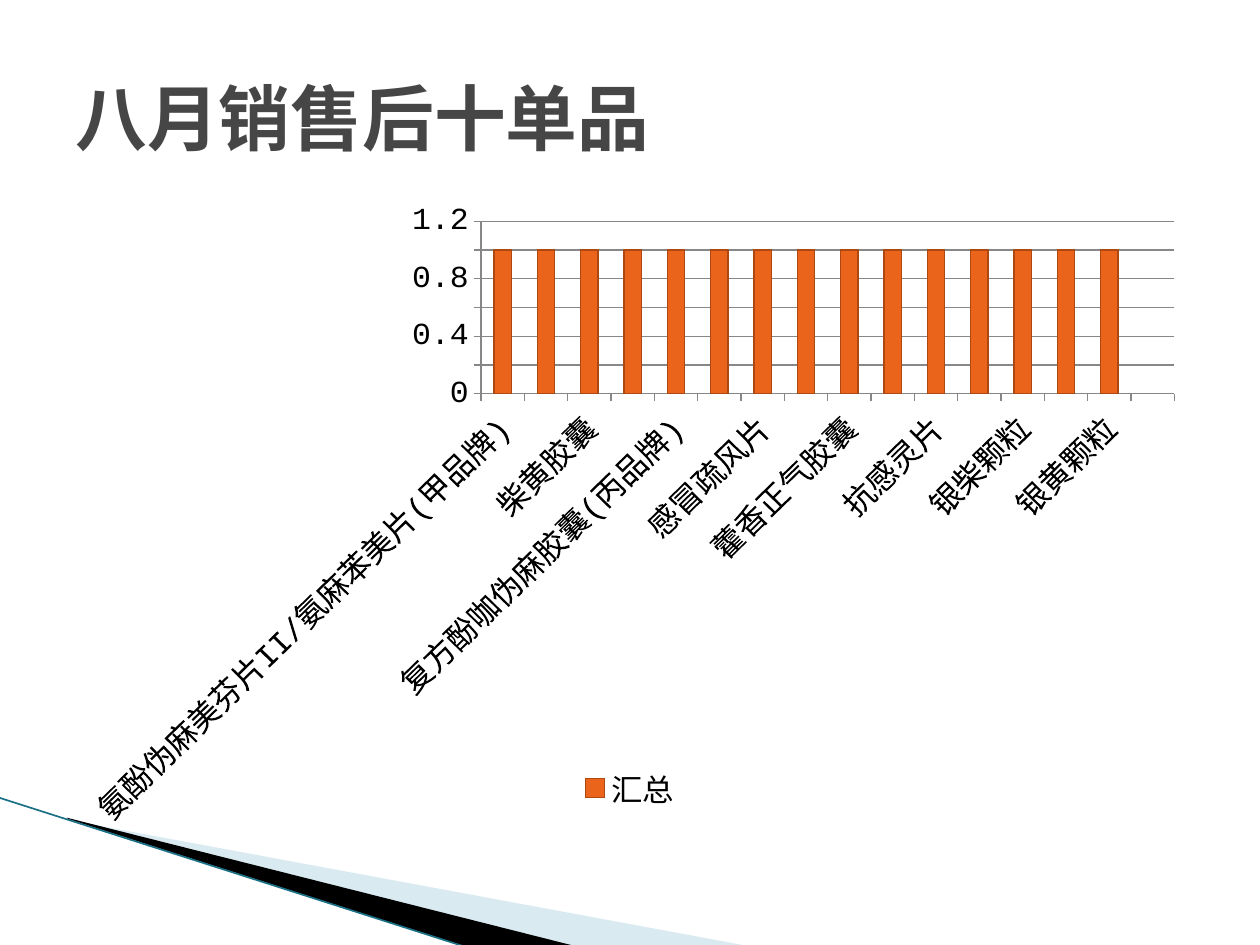
from lxml.etree import SubElement
from pptx import Presentation
from pptx.chart.data import CategoryChartData
from pptx.dml.color import RGBColor
from pptx.enum.chart import XL_CHART_TYPE, XL_LEGEND_POSITION, XL_TICK_MARK
from pptx.enum.shapes import MSO_CONNECTOR
from pptx.enum.text import MSO_ANCHOR
from pptx.oxml.ns import qn
from pptx.util import Inches, Pt

COLORS = {
    "title": "464646",
    "text": "000000",
    "pale_wedge": "A0CBDC",
    "dark_wedge": "000000",
    "edge": "1A7085",
    "bar": "EB641B",
    "bar_border": "AC4810",
    "grid": "878787",
}
FONT = "Courier New"


def color(name):
    return RGBColor.from_string(COLORS[name])


prs = Presentation()
prs.slide_width, prs.slide_height = Inches(10), Inches(7.5)
slide = prs.slides.add_slide(prs.slide_layouts[6])
shapes = slide.shapes

# Corner decoration: two wedges and the line along their edge
wedges = [
    ("pale_wedge", 40, [(0.55, 6.51), (5.95, 7.51), (4.56, 7.51), (0.55, 6.5)]),
    ("dark_wedge", 100, [(0.53, 6.49), (4.57, 7.51), (3.72, 7.52), (0.54, 6.5)]),
]
for fill_name, opacity, points in wedges:
    corners = [(Inches(x), Inches(y)) for x, y in points]
    builder = shapes.build_freeform(*corners[0])
    builder.add_line_segments(corners[1:], close=True)
    wedge = builder.convert_to_shape()
    wedge.shadow.inherit = False
    wedge.fill.solid()
    wedge.fill.fore_color.rgb = color(fill_name)
    wedge.line.fill.background()
    if opacity < 100:
        srgb = wedge.fill._xPr.find(".//" + qn("a:srgbClr"))
        SubElement(srgb, qn("a:alpha"), val=str(opacity * 1000))

edge = shapes.add_connector(
    MSO_CONNECTOR.STRAIGHT, Inches(-0.01), Inches(6.33), Inches(3.71), Inches(7.52)
)
edge.line.color.rgb = color("edge")
edge.line.width = Pt(0.95)
SubElement(edge._element.spPr, qn("a:effectLst"))

# Title
title = shapes.add_textbox(Inches(0.5), Inches(0.3), Inches(9), Inches(1.25))
title.text_frame.word_wrap = True
title.text_frame.vertical_anchor = MSO_ANCHOR.MIDDLE
heading = title.text_frame.paragraphs[0].add_run()
heading.text = "八月销售后十单品"
heading.font.name = FONT
heading.font.size = Pt(41)
heading.font.bold = True
heading.font.color.rgb = color("title")

# Sales chart
products = [
    "氨酚伪麻美芬片II/氨麻苯美片(甲品牌)", "布洛伪麻软胶囊(乙牌)",
    "柴黄胶囊", "柴芩软胶囊",
    "复方酚咖伪麻胶囊(丙品牌)", "复方锌布颗粒(丁号品牌)",
    "感冒疏风片", "藿香正气滴丸", "藿香正气胶囊", "藿香正气丸",
    "抗感灵片", "小柴胡片", "银柴颗粒", "银黄胶囊", "银黄颗粒",
]
sales = CategoryChartData()
sales.categories = products + ["(空白)"]
sales.add_series("汇总", [1] * len(products) + [None])
chart = shapes.add_chart(
    XL_CHART_TYPE.COLUMN_CLUSTERED,
    Inches(0.5), Inches(1.62), Inches(9), Inches(4.95), sales,
).chart
chart.has_title = False
chart.font.name = FONT
chart.font.size = Pt(18)
chart.font.color.rgb = color("text")
chart.has_legend = True
chart.legend.position = XL_LEGEND_POSITION.BOTTOM
chart.legend.include_in_layout = False

for axis in (chart.category_axis, chart.value_axis):
    axis.major_tick_mark = XL_TICK_MARK.OUTSIDE
    axis.minor_tick_mark = XL_TICK_MARK.NONE
    axis.format.line.color.rgb = color("grid")
chart.value_axis.has_major_gridlines = True
chart.value_axis.major_gridlines.format.line.color.rgb = color("grid")

plot = chart.plots[0]
plot.vary_by_categories = False
plot.gap_width = 150
totals = plot.series[0]
totals.format.fill.solid()
totals.format.fill.fore_color.rgb = color("bar")
totals.format.line.color.rgb = color("bar_border")
totals.format.line.width = Pt(0.75)

prs.save("out.pptx")
